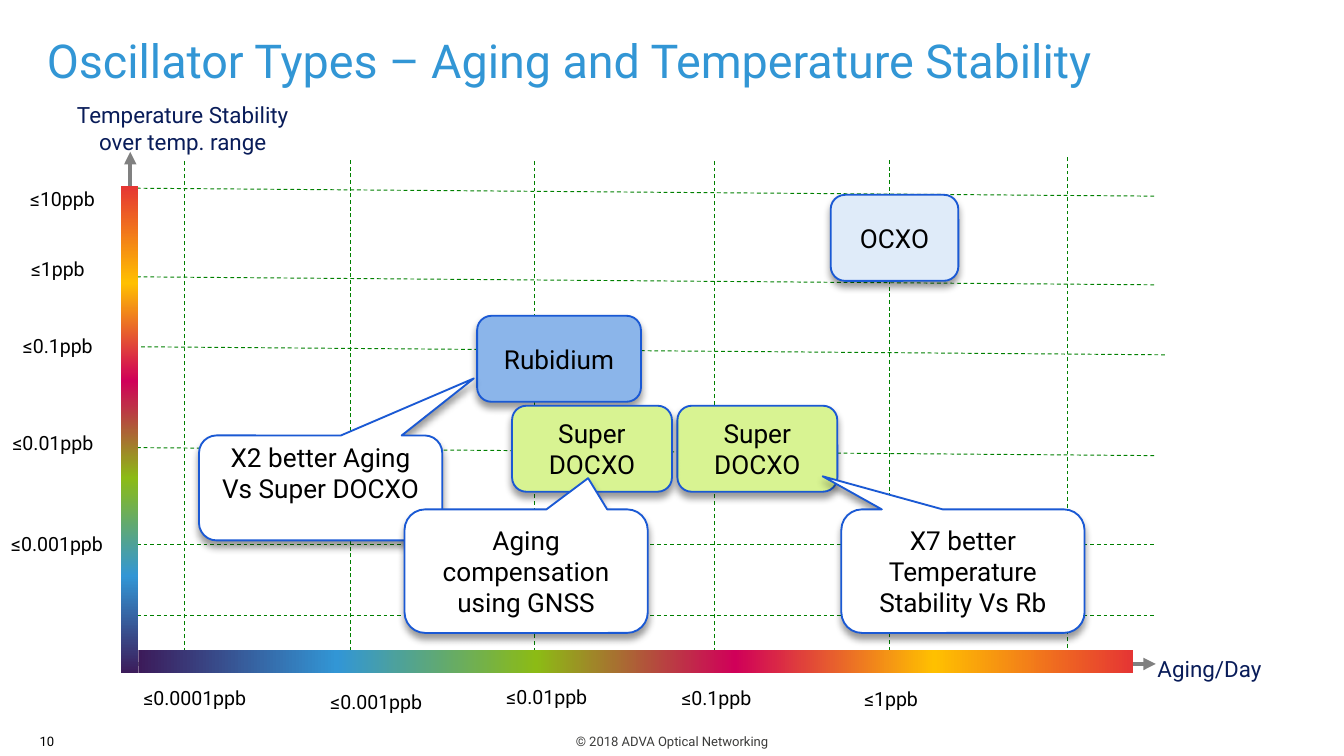
import pptx
import pptx.util
import pptx.dml.color
import pptx.enum.dml
import pptx.enum.shapes
import pptx.enum.text
import pptx.oxml
import pptx.oxml.ns
from lxml import etree

Pt = pptx.util.Pt
ALIGN = pptx.enum.text.PP_ALIGN
ANCHOR = pptx.enum.text.MSO_ANCHOR
KIND = pptx.enum.shapes.MSO_SHAPE
qn = pptx.oxml.ns.qn

TITLE = "Oscillator Types – Aging and Temperature Stability"
NAVY, BLACK = "091C59", "000000"

# text, centre x, centre y, size, colour
LABELS = [
    ("© 2018 ADVA Optical Networking", 360, 397.4, 7, "3C3C3B"),
    ("10", 25.2, 397.4, 7, BLACK),
    ("Temperature Stability\nover temp. range", 98, 68.4, 12, NAVY),
    ("Aging/Day", 648, 358, 12, NAVY),
]
TICKS = [
    ("≤10ppb", 33.5, 106.6), ("≤1ppb", 31, 144), ("≤0.1ppb", 31, 185.4),
    ("≤0.01ppb", 28.4, 237.2), ("≤0.001ppb", 30.6, 291.2),
    ("≤0.0001ppb", 104.4, 373.7), ("≤0.001ppb", 201.6, 375.8),
    ("≤0.01ppb", 293, 373), ("≤0.1ppb", 383.8, 373.7), ("≤1ppb", 477.4, 374.4),
]

# start x, start y, drop to the right end
ROWS = [
    (69.8, 100.8, 4.3), (69.8, 148.3, 4.3), (75.6, 185.8, 4.3),
    (69.8, 239.8, 4.3), (69.8, 291.6, 0), (69.8, 329.8, 0),
]
ROW_W = 549.2
# x, top
COLS = [(98.6, 85.5), (187.9, 85), (286.6, 85.5), (383, 85.5), (476.6, 85), (571.7, 83.5)]
COL_H = 270.7

AXES = [(69.8, 355, 69.8, 81.4), (69.8, 355.7, 619.2, 355.7)]
RAINBOW = ["3C1B5A", "3296D5", "8CBB15", "D00059", "FFC000", "E53534"]
# left, top, width, height, gradient angle
BARS = [(64.8, 99.4, 9.4, 261.4, 90), (74.2, 348.5, 532.8, 12.2, 0)]

# text, left, top, width, height, fill
OCXO = ("OCXO", 445, 104.4, 68.4, 46.1, "DFEBF9")
RUBY = ("Rubidium", 255.6, 169.2, 87.8, 46.1, "8BB5EA")
LEFT, RIGHT = [("Super\nDOCXO", x, 217.4, 85.7, 46.1, "D8F392") for x in (274.3, 362.9)]
# as above, then pointer tip and space under the text
AGING = ("X2 better Aging Vs Super DOCXO", 106.6, 233.3, 130.3, 56.2, "FFFFFF",
         (0.63, -1.044), 19.5)
TEMP = ("X7 better Temperature Stability Vs Rb", 450.7, 272.9, 130.3, 66.2, "FFFFFF",
        (-0.577, -0.768))
GNSS = ("Aging compensation using GNSS", 216.7, 272.9, 130.3, 66.2, "FFFFFF",
        (0.255, -0.753))


def rgb(code):
    return pptx.dml.color.RGBColor.from_string(code)


def write(frame, text, size, color, align=ALIGN.CENTER, anchor=ANCHOR.MIDDLE):
    frame.word_wrap = True
    frame.vertical_anchor = anchor
    frame.text = text
    for para in frame.paragraphs:
        para.alignment = align
        para.font.name = "Roboto"
        para.font.size = Pt(size)
        para.font.color.rgb = rgb(color)


def label(text, x, y, size=10.5, color=BLACK):
    """Add text centred on a point."""
    w, h = 180, 36
    box = shapes.add_textbox(Pt(x - w / 2), Pt(y - h / 2), Pt(w), Pt(h))
    write(box.text_frame, text, size, color)


def line(x1, y1, x2, y2, color, width, dash=False, arrow=False):
    link = shapes.add_connector(pptx.enum.shapes.MSO_CONNECTOR.STRAIGHT,
                                Pt(x1), Pt(y1), Pt(x2), Pt(y2))
    link.line.color.rgb = rgb(color)
    link.line.width = Pt(width)
    if dash:
        link.line.dash_style = pptx.enum.dml.MSO_LINE.DASH
    if arrow:
        etree.SubElement(link.line._get_or_add_ln(), qn("a:tailEnd"), type="triangle")
    etree.SubElement(link._element.spPr, qn("a:effectLst"))


def bar(x, y, w, h, angle):
    """Add a rainbow scale along an axis."""
    shape = shapes.add_shape(KIND.RECTANGLE, Pt(x), Pt(y), Pt(w), Pt(h))
    shape.shadow.inherit = False
    shape.line.fill.background()
    shape.fill.gradient()
    shape.fill.gradient_angle = angle
    stops = shape._element.spPr.find(".//" + qn("a:gsLst"))
    for stop in list(stops):
        stops.remove(stop)
    for i, code in enumerate(RAINBOW):
        stop = etree.SubElement(stops, qn("a:gs"), pos=str(i * 20000))
        etree.SubElement(stop, qn("a:srgbClr"), val=code)


def shade(shape):
    """Give a shape a soft shadow below it."""
    shape.shadow.inherit = False
    effects = shape._element.spPr.find(qn("a:effectLst"))
    drop = etree.SubElement(effects, qn("a:outerShdw"), blurRad=str(Pt(4)),
                            dist=str(Pt(3)), dir="5400000", rotWithShape="0")
    tint = etree.SubElement(drop, qn("a:srgbClr"), val=BLACK)
    etree.SubElement(tint, qn("a:alpha"), val="40000")


def card(text, x, y, w, h, fill, tip=None, below=3):
    """Add a rounded box, or a callout when a pointer tip is given."""
    kind = KIND.ROUNDED_RECTANGULAR_CALLOUT if tip else KIND.ROUNDED_RECTANGLE
    shape = shapes.add_shape(kind, Pt(x), Pt(y), Pt(w), Pt(h))
    if tip:
        shape.adjustments[0], shape.adjustments[1] = tip
    shape.fill.solid()
    shape.fill.fore_color.rgb = rgb(fill)
    shape.line.color.rgb = rgb("1A59D4")
    shape.line.width = Pt(1)
    shade(shape)
    frame = shape.text_frame
    frame.margin_left = frame.margin_right = Pt(5)
    frame.margin_top, frame.margin_bottom = Pt(3), Pt(below)
    write(frame, text, 14, BLACK)


deck = pptx.Presentation()
deck.slide_width, deck.slide_height = Pt(720), Pt(405)
shapes = deck.slides.add_slide(deck.slide_layouts[6]).shapes

head = shapes.add_textbox(Pt(18), Pt(0), Pt(684), Pt(47.5)).text_frame
head.margin_right = head.margin_top = head.margin_bottom = 0
write(head, TITLE, 25, "3296D5", ALIGN.LEFT, ANCHOR.BOTTOM)
head.paragraphs[0].line_spacing = 0.9

for axis in AXES:
    line(*axis, "808080", 2.25, arrow=True)
for x, y, drop in ROWS:
    line(x, y, x + ROW_W, y + drop, "008000", 0.5, dash=True)
for x, y in COLS:
    line(x, y + COL_H, x, y, "008000", 0.5, dash=True)
for item in LABELS + TICKS:
    label(*item)
for item in BARS:
    bar(*item)
for item in (OCXO, RUBY, AGING, RIGHT, TEMP, LEFT, GNSS):
    card(*item)

deck.save("out.pptx")
